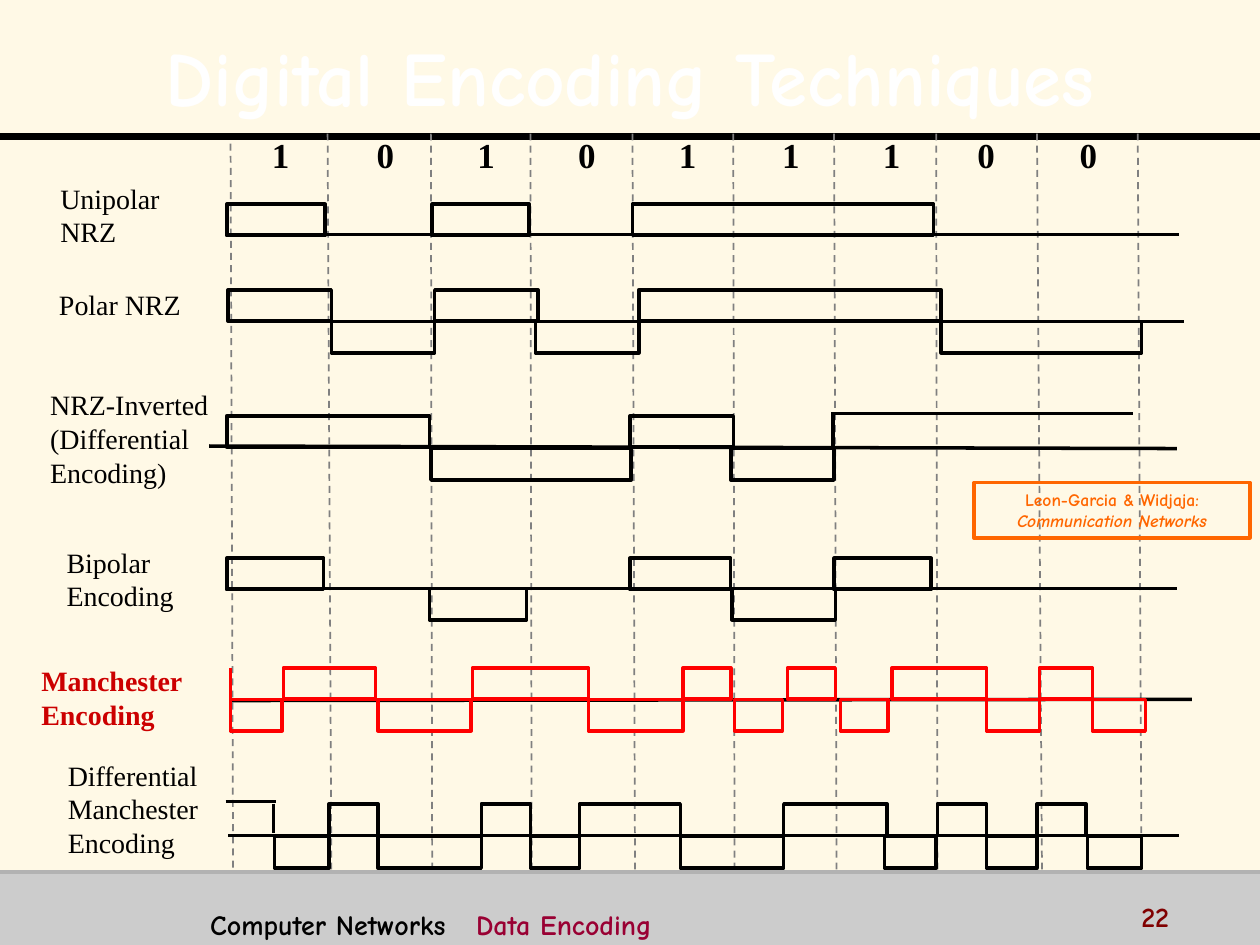
from typing import NamedTuple

from lxml import etree
from pptx import Presentation
from pptx.dml.color import RGBColor
from pptx.enum.dml import MSO_LINE
from pptx.enum.shapes import MSO_CONNECTOR, MSO_SHAPE
from pptx.enum.text import MSO_ANCHOR, PP_ALIGN
from pptx.oxml.ns import qn
from pptx.util import Inches, Pt

RECTANGLE = MSO_SHAPE.RECTANGLE
STRAIGHT = MSO_CONNECTOR.STRAIGHT
DASH = MSO_LINE.DASH
LEFT, CENTER = PP_ALIGN.LEFT, PP_ALIGN.CENTER
TOP, MIDDLE = MSO_ANCHOR.TOP, MSO_ANCHOR.MIDDLE

CREAM = RGBColor(0xFF, 0xF9, 0xE6)
BLACK = RGBColor(0x00, 0x00, 0x00)
WHITE = RGBColor(0xFF, 0xFF, 0xFF)
FOOTER_GREY = RGBColor(0xCC, 0xCC, 0xCC)
EDGE_GREY = RGBColor(0xB2, 0xB2, 0xB2)
GUIDE_GREY = RGBColor(0x80, 0x80, 0x80)
RED = RGBColor(0xFF, 0x00, 0x00)
DARK_RED = RGBColor(0xCC, 0x00, 0x00)
MAROON = RGBColor(0x80, 0x00, 0x00)
PLUM = RGBColor(0x99, 0x00, 0x33)
ORANGE = RGBColor(0xFF, 0x66, 0x00)

COMIC, TIMES = "Comic Neue", "Times New Roman"
PULSE_HEIGHT = 0.25


class Box(NamedTuple):
    left: float
    top: float
    width: float
    height: float


class Segment(NamedTuple):
    x1: float
    y1: float
    x2: float
    y2: float
    weight: float = 2
    color: RGBColor = BLACK


class Span(NamedTuple):
    text: str
    color: RGBColor = BLACK
    italic: bool = False


class Wave(NamedTuple):
    """One encoding: its label, axis and (left, width) pulses on either side."""
    label: str
    label_box: Box
    axis: Segment
    high_top: float
    high: list[tuple[float, float]]
    low_top: float = 0
    low: list[tuple[float, float]] = []
    edges: list[Segment] = []
    color: RGBColor = BLACK
    label_color: RGBColor = BLACK


BITS = [(2.06, "1"), (2.89, "0"), (3.69, "1"), (4.49, "0"), (5.29, "1"),
        (6.11, "1"), (6.91, "1"), (7.66, "0"), (8.47, "0")]

# Top and bottom x of each bit boundary
GUIDES = [(1.83, 1.85), (2.6, 2.63), (3.42, 3.43), (4.21, 4.22), (5.02, 5.04),
          (5.82, 5.83), (6.62, 6.64), (7.43, 7.44), (8.23, 8.27), (9.03, 9.06)]

WAVES = [
    Wave("Unipolar\nNRZ", Box(0.38, 1.39, 0.99, 0.63),
         Segment(1.81, 1.86, 9.36, 1.86),
         1.62, [(1.8, 0.78), (3.43, 0.77), (5.02, 2.39)]),
    Wave("Polar NRZ", Box(0.37, 2.23, 1.17, 0.36),
         Segment(1.86, 2.55, 9.4, 2.55),
         2.3, [(1.81, 0.82), (3.45, 0.82), (5.07, 2.4)],
         2.55, [(2.63, 0.82), (4.25, 0.82), (7.47, 1.59)]),
    Wave("NRZ-Inverted\n(Differential\nEncoding)", Box(0.3, 3.03, 1.46, 0.9),
         Segment(1.66, 3.54, 9.34, 3.56),
         3.3, [(1.8, 1.61), (5, 0.82)],
         3.56, [(3.42, 1.59), (5.8, 0.82)],
         [Segment(6.61, 3.55, 6.61, 3.27), Segment(6.61, 3.28, 8.99, 3.28)]),
    Wave("Bipolar\nEncoding", Box(0.43, 4.28, 1.05, 0.63),
         Segment(1.8, 4.67, 9.34, 4.67),
         4.43, [(1.8, 0.77), (5, 0.8), (6.62, 0.77)],
         4.67, [(3.41, 0.77), (5.81, 0.82)]),
    Wave("Manchester\nEncoding", Box(0.23, 5.22, 1.5, 0.64),
         Segment(1.83, 5.56, 9.46, 5.55),
         5.3, [(2.25, 0.73), (3.75, 0.92), (5.42, 0.38), (6.25, 0.38),
               (7.08, 0.75), (8.25, 0.42)],
         5.55, [(1.83, 0.41), (3, 0.74), (4.67, 0.75), (5.83, 0.38),
                (6.67, 0.38), (7.83, 0.42), (8.67, 0.42)],
         [Segment(1.83, 5.3, 1.83, 5.55, 1.5, RED)], RED, DARK_RED),
    Wave("Differential\nManchester\nEncoding", Box(0.44, 5.97, 1.24, 0.9),
         Segment(1.81, 6.63, 9.36, 6.63),
         6.38, [(2.61, 0.39), (3.82, 0.39), (4.6, 0.8), (6.22, 0.82),
                (7.44, 0.39), (8.23, 0.39)],
         6.64, [(2.18, 0.43), (3, 0.82), (4.21, 0.39), (5.4, 0.82),
                (7.02, 0.41), (7.83, 0.4), (8.63, 0.43)],
         [Segment(1.79, 6.36, 2.19, 6.36), Segment(2.17, 6.38, 2.17, 6.61)]),
]


def add_line(slide, segment: Segment, dash=None) -> None:
    ends = [Inches(value) for value in segment[:4]]
    connector = slide.shapes.add_connector(STRAIGHT, *ends)
    connector.line.width = Pt(segment.weight)
    connector.line.color.rgb = segment.color
    if dash is not None:
        connector.line.dash_style = dash
    etree.SubElement(connector._element.spPr, qn("a:effectLst"))


def add_rectangle(slide, box: Box, fill=None, outline=None):
    rectangle = slide.shapes.add_shape(RECTANGLE, *map(Inches, box))
    rectangle.shadow.inherit = False
    if fill is None:
        rectangle.fill.background()
    else:
        rectangle.fill.solid()
        rectangle.fill.fore_color.rgb = fill
    if outline is None:
        rectangle.line.fill.background()
    else:
        rectangle.line.color.rgb = outline
        rectangle.line.width = Pt(2)
    return rectangle


def add_run_shadow(run) -> None:
    effects = etree.Element(qn("a:effectLst"))
    shadow = etree.SubElement(effects, qn("a:outerShdw"), dist="35921", dir="2700000")
    etree.SubElement(shadow, qn("a:srgbClr"), val=str(BLACK))
    run.font._element.find(qn("a:solidFill")).addnext(effects)


def write_text(shape, paragraphs: list[list[Span]], *, font=COMIC, size=16, bold=True,
               align=LEFT, anchor=TOP, wrap=True, spacing=None, tab=None, shadow=False) -> None:
    frame = shape.text_frame
    frame.word_wrap = wrap
    frame.vertical_anchor = anchor
    for index, spans in enumerate(paragraphs):
        paragraph = frame.add_paragraph() if index else frame.paragraphs[0]
        paragraph.alignment = align
        if spacing is not None:
            paragraph.line_spacing = spacing
        if tab is not None:
            stops = etree.SubElement(paragraph._p.get_or_add_pPr(), qn("a:tabLst"))
            etree.SubElement(stops, qn("a:tab"), pos=str(Inches(tab)), algn="l")
        for span in spans:
            run = paragraph.add_run()
            run.text = span.text
            run.font.name, run.font.size = font, Pt(size)
            run.font.bold, run.font.italic = bold, span.italic
            run.font.color.rgb = span.color
            if shadow:
                add_run_shadow(run)


def add_text(slide, box: Box, paragraphs: list[list[Span]], **text_format) -> None:
    write_text(slide.shapes.add_textbox(*map(Inches, box)), paragraphs, **text_format)


def add_wave(slide, wave: Wave) -> None:
    emphasized = wave.label_color != BLACK
    add_text(slide, wave.label_box,
             [[Span(line, wave.label_color)] for line in wave.label.split("\n")],
             font=TIMES, bold=emphasized, wrap=emphasized)
    add_line(slide, wave.axis)
    for top, pulses in ((wave.high_top, wave.high), (wave.low_top, wave.low)):
        for left, width in pulses:
            add_rectangle(slide, Box(left, top, width, PULSE_HEIGHT), outline=wave.color)
    for edge in wave.edges:
        add_line(slide, edge)


def main() -> None:
    deck = Presentation()
    deck.slide_width, deck.slide_height = Inches(10), Inches(7.5)
    slide = deck.slides.add_slide(deck.slide_layouts[6])
    slide.background.fill.solid()
    slide.background.fill.fore_color.rgb = CREAM

    add_rectangle(slide, Box(0, 6.92, 10, 0.58), fill=FOOTER_GREY)
    add_line(slide, Segment(0, 1.08, 10, 1.08, 4))
    add_line(slide, Segment(0, 6.92, 10, 6.92, 2, EDGE_GREY))
    add_text(slide, Box(0.2, 0.13, 9.61, 0.87), [[Span("Digital Encoding Techniques", WHITE)]],
             size=44, align=CENTER, anchor=MIDDLE, spacing=1.1, shadow=True)
    add_text(slide, Box(1.57, 7.15, 7.28, 0.31),
             [[Span("Computer Networks\t"), Span("Data Encoding", PLUM)]], tab=2.11)
    add_text(slide, Box(8.96, 7.09, 1, 0.25), [[Span("22", MAROON)]])

    for index, (top_x, bottom_x) in enumerate(GUIDES):
        top = 1.06 if index else 1.14
        add_line(slide, Segment(top_x, top, bottom_x, 6.9, 1, GUIDE_GREY), DASH)
    for left, bit in BITS:
        add_text(slide, Box(left, 1.01, 0.34, 0.43), [[Span(bit)]],
                 font=TIMES, size=20, wrap=False)
    for wave in WAVES:
        add_wave(slide, wave)

    citation = add_rectangle(slide, Box(7.73, 3.83, 2.19, 0.44), outline=ORANGE)
    write_text(citation, [[Span("Leon-Garcia & Widjaja:", ORANGE)],
                          [Span("Communication Networks", ORANGE, italic=True)]],
               size=10, align=CENTER, anchor=MIDDLE)
    deck.save("out.pptx")


if __name__ == "__main__":
    main()
